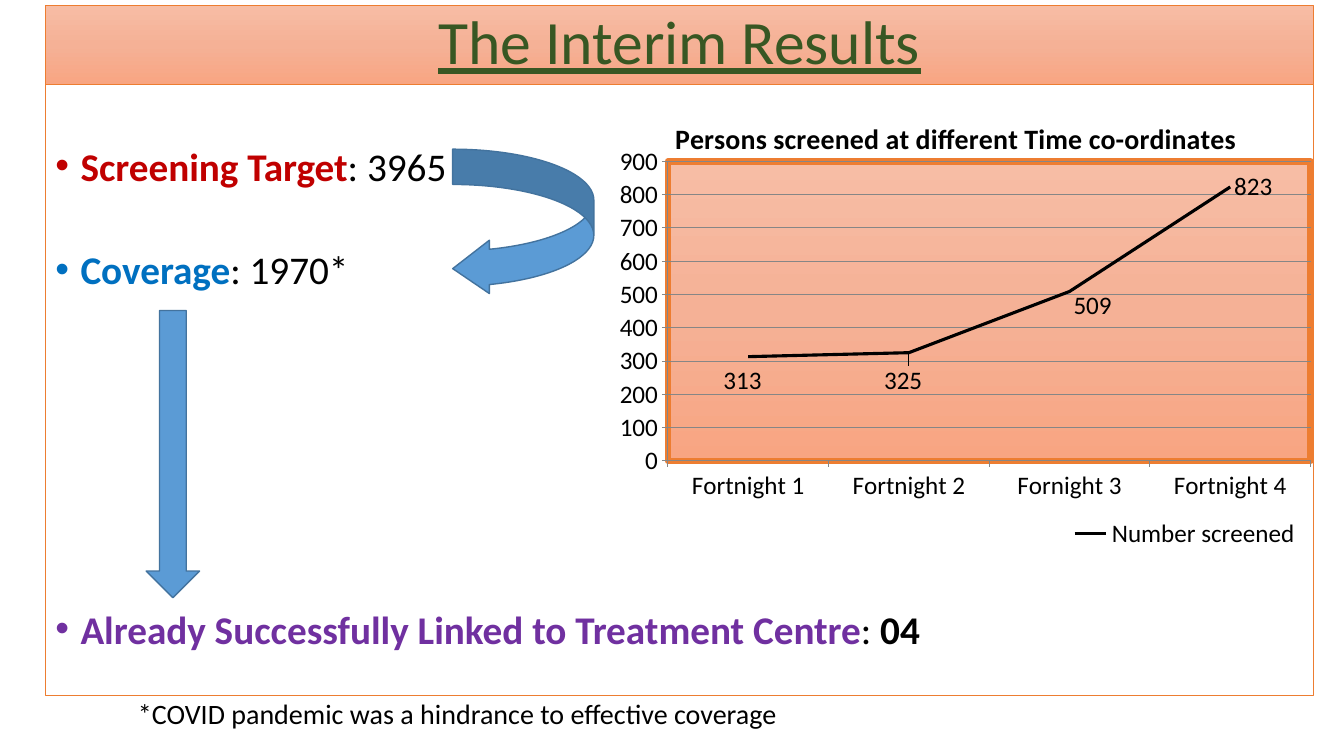
from lxml import etree
from pptx import Presentation
from pptx.chart.data import CategoryChartData
from pptx.dml.color import RGBColor
from pptx.enum.chart import XL_CHART_TYPE, XL_LABEL_POSITION, XL_LEGEND_POSITION
from pptx.enum.shapes import MSO_SHAPE
from pptx.enum.text import MSO_ANCHOR, MSO_AUTO_SIZE, PP_ALIGN
from pptx.oxml import parse_xml
from pptx.oxml.ns import nsdecls, qn
from pptx.util import Inches, Pt

LINE_CHART = XL_CHART_TYPE.LINE
LABEL_RIGHT = XL_LABEL_POSITION.RIGHT
LEGEND_RIGHT = XL_LEGEND_POSITION.RIGHT
RECTANGLE = MSO_SHAPE.RECTANGLE
CURVED_ARROW = MSO_SHAPE.CURVED_LEFT_ARROW
DOWN_ARROW = MSO_SHAPE.DOWN_ARROW
TOP, MIDDLE = MSO_ANCHOR.TOP, MSO_ANCHOR.MIDDLE
NO_AUTOFIT = MSO_AUTO_SIZE.NONE
LEFT, CENTER = PP_ALIGN.LEFT, PP_ALIGN.CENTER

BLACK = RGBColor(0x00, 0x00, 0x00)
WHITE = RGBColor(0xFF, 0xFF, 0xFF)
ORANGE = RGBColor(0xED, 0x7D, 0x31)
GREEN = RGBColor(0x38, 0x57, 0x23)
RED = RGBColor(0xC0, 0x00, 0x00)
BLUE = RGBColor(0x00, 0x70, 0xC0)
PURPLE = RGBColor(0x70, 0x30, 0xA0)
ARROW_FILL = RGBColor(0x5B, 0x9B, 0xD5)
ARROW_LINE = RGBColor(0x43, 0x73, 0x9E)
GRAY = RGBColor(0x86, 0x86, 0x86)
PEACH_STOPS = ((0, "F7BDA5"), (50, "F5B196"), (100, "F8A582"))


def peach_gradient():
    stops = "".join(f'<a:gs pos="{pos * 1000}"><a:srgbClr val="{color}"/></a:gs>'
                    for pos, color in PEACH_STOPS)
    return parse_xml(f'<a:gradFill {nsdecls("a")} rotWithShape="1"><a:gsLst>{stops}'
                     '</a:gsLst><a:lin ang="5400000" scaled="0"/></a:gradFill>')


def set_layout(parent, index, **values):
    """Give a chart part a manual layout, as fractions of the chart."""
    for old in parent.findall(qn("c:layout")):
        parent.remove(old)
    layout = etree.Element(qn("c:layout"))
    manual = etree.SubElement(layout, qn("c:manualLayout"))
    for tag, value in values.items():
        etree.SubElement(manual, qn(f"c:{tag}")).set("val", str(value))
    parent.insert(index, layout)


class SlideBuilder:
    font = "Calibri"

    def __init__(self, prs):
        self.slide = prs.slides.add_slide(prs.slide_layouts[5])

    def format_font(self, font, size, color, bold=False):
        font.name, font.size, font.bold = self.font, Pt(size), bold
        font.color.rgb = color

    def title(self, text, box):
        sp = self.slide.shapes.title
        sp.left, sp.top, sp.width, sp.height = map(Inches, box)
        sp._element.spPr.append(peach_gradient())
        sp.line.color.rgb, sp.line.width = ORANGE, Pt(0.5)
        tf = sp.text_frame
        tf.text = text
        tf.auto_size, tf.vertical_anchor = NO_AUTOFIT, MIDDLE
        p = tf.paragraphs[0]
        p.alignment, p.line_spacing = CENTER, 0.9
        self.format_font(p.runs[0].font, 44, GREEN)
        p.runs[0].font.underline = True

    def shape(self, kind, box, fill, line, adjustments=()):
        sp = self.slide.shapes.add_shape(kind, *map(Inches, box))
        sp.shadow.inherit = False
        sp.fill.solid()
        sp.fill.fore_color.rgb = fill
        sp.line.color.rgb, sp.line.width = line, Pt(1)
        for i, value in enumerate(adjustments):
            sp.adjustments[i] = value
        return sp

    def bullets(self, box, items):
        tf = self.shape(RECTANGLE, box, WHITE, ORANGE).text_frame
        tf.word_wrap, tf.vertical_anchor = True, TOP
        tf.margin_top = Inches(0.66)
        for i, (label, color, value, value_bold, space) in enumerate(items):
            p = tf.add_paragraph() if i else tf.paragraphs[0]
            p.alignment, p.line_spacing, p.space_before = LEFT, 0.8, Pt(space)
            pPr = p._p.get_or_add_pPr()
            pPr.set("marL", str(Inches(0.25)))
            pPr.set("indent", str(Inches(-0.25)))
            etree.SubElement(pPr, qn("a:buFont")).set("typeface", "Arial")
            etree.SubElement(pPr, qn("a:buChar")).set("char", "•")
            for text, run_color, bold in ((label, color, True), (": ", BLACK, False),
                                          (value, BLACK, value_bold)):
                r = p.add_run()
                r.text = text
                self.format_font(r.font, 28, run_color, bold)

    def note(self, text, box):
        tf = self.slide.shapes.add_textbox(*map(Inches, box)).text_frame
        tf.word_wrap = False
        tf.text = text
        self.format_font(tf.paragraphs[0].runs[0].font, 20, BLACK)

    def line_chart(self, box, title, name, points, label_offsets):
        data = CategoryChartData(number_format="#,##0")
        data.categories = list(points)
        data.add_series(name, list(points.values()))
        chart = self.slide.shapes.add_chart(LINE_CHART, *map(Inches, box), data).chart
        self.format_font(chart.font, 18, BLACK)

        # Title and legend
        chart.has_title = True
        chart.chart_title.include_in_layout = False
        tf = chart.chart_title.text_frame
        tf.text = title
        self.format_font(tf.paragraphs[0].runs[0].font, 20, BLACK, True)
        set_layout(chart.chart_title._element, 1, xMode="edge", yMode="edge", x=0.11, y=0.05)
        chart.has_legend = True
        chart.legend.position = LEGEND_RIGHT
        chart.legend.include_in_layout = False
        set_layout(chart.legend._element, 1, xMode="edge", yMode="edge",
                   x=0.66, y=0.9, w=0.33, h=0.08)

        # Axes
        value_axis = chart.value_axis
        value_axis.minimum_scale, value_axis.maximum_scale = 0, 900
        value_axis.major_unit = 100
        value_axis.has_major_gridlines = True
        for line in (value_axis.major_gridlines.format.line, value_axis.format.line,
                     chart.category_axis.format.line):
            line.color.rgb, line.width = GRAY, Pt(0.75)

        # Series and its labels
        plot = chart.plots[0]
        plot.vary_by_categories = False
        series = plot.series[0]
        series.smooth = False
        series.format.line.color.rgb, series.format.line.width = BLACK, Pt(2.25)
        labels = series.data_labels
        labels.show_value, labels.position = True, LABEL_RIGHT
        labels.number_format, labels.number_format_is_linked = "#,##0", False
        for i, (dx, dy) in enumerate(label_offsets):
            series.points[i].data_label.position = LABEL_RIGHT
            dLbl = labels._element.findall(qn("c:dLbl"))[i]
            set_layout(dLbl, 1, x=dx, y=dy)

        # Plot area
        plot_area = chart._chartSpace.chart.plotArea
        set_layout(plot_area, 0, layoutTarget="inner", xMode="edge", yMode="edge",
                   x=0.107, y=0.152, w=0.893, h=0.635)
        spPr = etree.SubElement(plot_area, qn("c:spPr"))
        spPr.append(peach_gradient())
        spPr.append(parse_xml(f'<a:ln {nsdecls("a")} w="{Pt(4.5)}"><a:solidFill>'
                              f'<a:srgbClr val="{ORANGE}"/></a:solidFill></a:ln>'))


def main():
    prs = Presentation()
    prs.slide_width, prs.slide_height = Inches(13.33), Inches(7.5)
    s = SlideBuilder(prs)

    # Heading and key figures
    s.title("The Interim Results", (0.45, 0.05, 12.58, 0.79))
    s.bullets((0.45, 0.84, 12.58, 6.06), [
        ("Screening Target", RED, "3965", False, 0),
        ("Coverage", BLUE, "1970*", False, 47),
        ("Already Successfully Linked to Treatment Centre", PURPLE, "04", True, 230),
    ])

    # Arrows from target to coverage to treatment
    s.shape(CURVED_ARROW, (4.49, 1.48, 1.4, 1.45), ARROW_FILL, ARROW_LINE, (0.25, 0.378, 0.26))
    s.shape(DOWN_ARROW, (1.45, 3.08, 0.53, 2.85), ARROW_FILL, ARROW_LINE)

    # Footnote and chart
    s.note("*COVID pandemic was a hindrance to effective coverage", (1.27, 6.86, 6.74, 0.44))
    s.line_chart((5.86, 0.89, 7.17, 4.68), "Persons screened at different Time co-ordinates",
                 "Number screened",
                 {"Fortnight 1": 313, "Fortnight 2": 325, "Fornight 3": 509, "Fortnight 4": 823},
                 [(-0.04, 0.05), (-0.04, 0.06), (0, 0.03)])
    prs.save("out.pptx")


if __name__ == "__main__":
    main()
